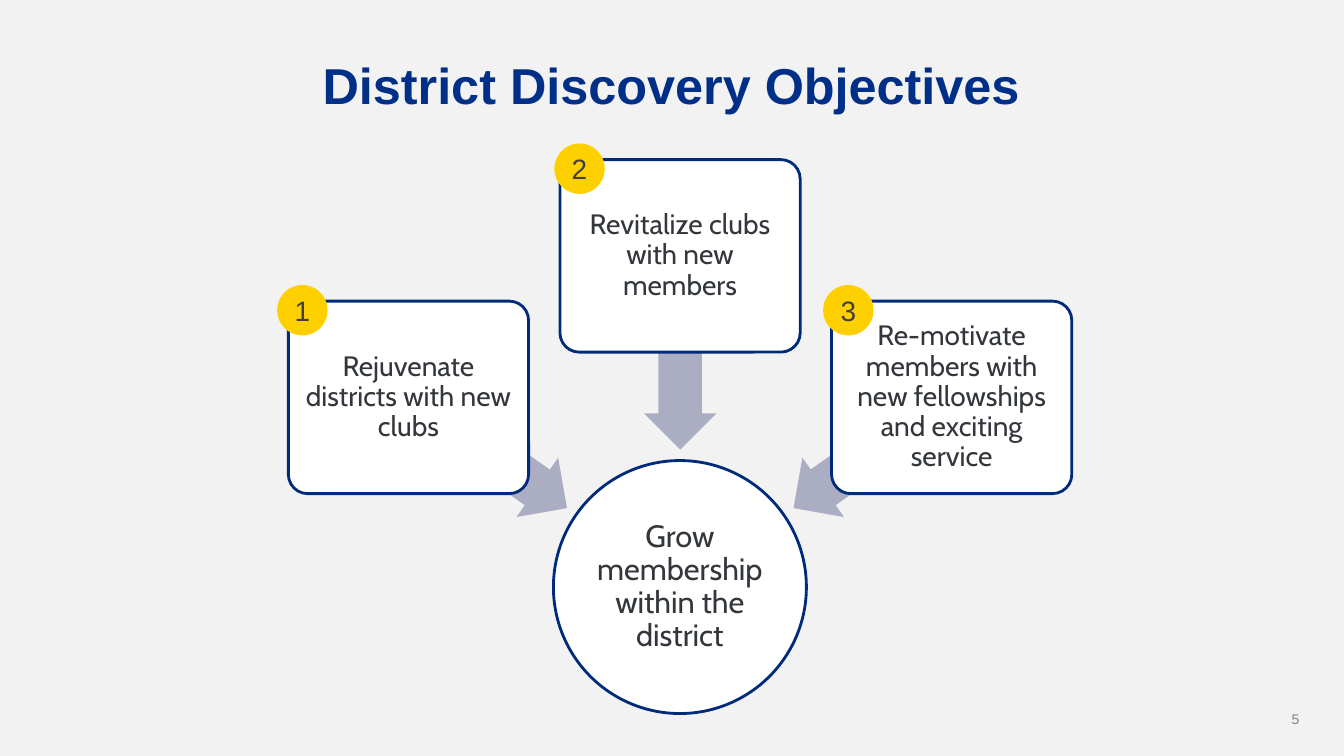
from dataclasses import dataclass

from pptx import Presentation
from pptx.dml.color import RGBColor
from pptx.enum.shapes import MSO_SHAPE
from pptx.enum.text import MSO_ANCHOR, MSO_AUTO_SIZE, PP_ALIGN
from pptx.util import Pt


@dataclass(frozen=True)
class Theme:
    # Colours
    back: str = "F2F2F2"
    head: str = "002F87"
    edge: str = "002B7B"
    white: str = "FFFFFF"
    ink: str = "33373B"
    arrow: str = "ABADC3"
    badge: str = "FFD000"
    digit: str = "404040"
    gray: str = "808080"
    # Fonts and type sizes
    sans: str = "Arial"
    body: str = "Cabin"
    title: int = 36
    goal: int = 22
    text: int = 20
    small: int = 10


def color(code):
    return RGBColor.from_string(code)


class Deck:
    def __init__(self, theme):
        self.theme = theme
        self.deck = Presentation()
        self.deck.slide_width, self.deck.slide_height = Pt(960), Pt(540)
        self.slide = self.deck.slides.add_slide(self.deck.slide_layouts[5])
        fill = self.slide.background.fill
        fill.solid()
        fill.fore_color.rgb = color(theme.back)

    def label(self, shape, words, size, font, ink, align=PP_ALIGN.CENTER,
              inset=(0, 0), space=1.0, bold=False):
        frame = shape.text_frame
        frame.word_wrap = True
        frame.auto_size = MSO_AUTO_SIZE.NONE
        frame.vertical_anchor = MSO_ANCHOR.MIDDLE
        frame.margin_left = frame.margin_right = Pt(inset[0])
        frame.margin_top = frame.margin_bottom = Pt(inset[1])
        para = frame.paragraphs[0]
        para.alignment = align
        para.line_spacing = space
        run = para.add_run()
        run.text = words
        run.font.size = Pt(size)
        run.font.name = font
        run.font.bold = bold
        run.font.color.rgb = color(ink)

    def shape(self, kind, box, fill, edge=None):
        item = self.slide.shapes.add_shape(kind, *map(Pt, box))
        item.shadow.inherit = False
        item.fill.solid()
        item.fill.fore_color.rgb = color(fill)
        if edge:
            item.line.color.rgb = color(edge)
            item.line.width = Pt(2)
        else:
            item.line.fill.background()
        return item

    def title(self, words, box):
        item = self.slide.shapes.title
        item.left, item.top, item.width, item.height = map(Pt, box)
        t = self.theme
        self.label(item, words, t.title, t.sans, t.head,
                   inset=(7.2, 3.6), space=0.9, bold=True)

    def goal(self, words, box):
        t = self.theme
        item = self.shape(MSO_SHAPE.OVAL, box, t.white, t.edge)
        self.label(item, words, t.goal, t.body, t.ink,
                   inset=(1.5, 1.5), space=0.9)

    def card(self, words, box):
        t = self.theme
        item = self.shape(MSO_SHAPE.ROUNDED_RECTANGLE, box, t.white, t.edge)
        item.adjustments[0] = 0.1
        self.label(item, words, t.text, t.body, t.ink,
                   inset=(3, 3), space=0.9)

    def arrow(self, mid, turn):
        wide, high = 138.2, 51.8
        box = (mid[0] - wide / 2, mid[1] - high / 2, wide, high)
        item = self.shape(MSO_SHAPE.LEFT_ARROW, box, self.theme.arrow)
        item.adjustments[0], item.adjustments[1] = 0.6, 0.5
        item.rotation = turn

    def badge(self, words, spot):
        t = self.theme
        item = self.shape(MSO_SHAPE.OVAL, (*spot, 36, 36), t.badge)
        self.label(item, words, t.text, t.sans, t.digit)

    def page(self, words, box):
        t = self.theme
        item = self.slide.shapes.add_textbox(*map(Pt, box))
        self.label(item, words, t.small, t.sans, t.gray,
                   align=PP_ALIGN.RIGHT, inset=(0, 3.6))

    def save(self):
        self.deck.save("out.pptx")


def main():
    deck = Deck(Theme())

    # Title and page number
    deck.title("District Discovery Objectives", (65.5, 30.2, 828, 66.2))
    deck.page("5", (884.2, 504, 43.9, 19.4))

    # Central goal
    deck.goal("Grow membership within the district",
              (395.3, 329, 180.7, 180.7))

    # Objectives: words, card top, arrow middle and turn, badge left
    goals = [
        ("Rejuvenate districts with new clubs", 215.1, (348.4, 323.3), 215, 198),
        ("Revitalize clubs with new members", 114, (485.9, 252), 270, 396),
        ("Re-motivate members with new fellowships and exciting service",
         215.1, (623.4, 323.3), 325, 588),
    ]
    for i, (words, top, mid, turn, _) in enumerate(goals):
        deck.arrow(mid, turn)
        deck.card(words, (206 + 194 * i, top, 171.6, 137.5))

    # Number badges on the card corners
    for i, (_, top, _, _, left) in enumerate(goals):
        deck.badge(str(i + 1), (left, top - 11.5))

    deck.save()


if __name__ == "__main__":
    main()
